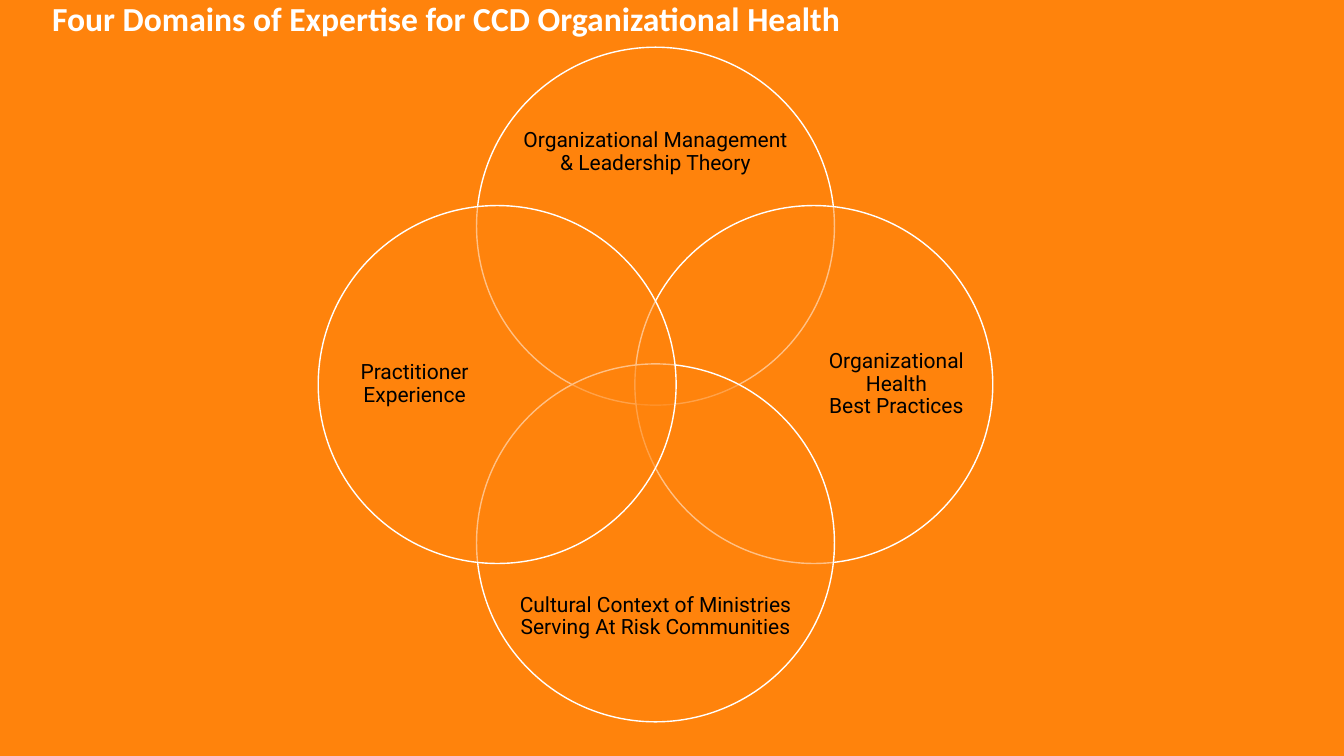
"""Build the slide with four overlapping domains of expertise."""
from dataclasses import dataclass

from lxml import etree
from pptx import Presentation
from pptx.dml.color import RGBColor
from pptx.enum.shapes import MSO_SHAPE
from pptx.enum.text import MSO_ANCHOR, MSO_AUTO_SIZE, PP_ALIGN
from pptx.oxml.ns import qn
from pptx.util import Cm, Pt

OVAL = MSO_SHAPE.OVAL
MIDDLE = MSO_ANCHOR.MIDDLE
NO_FIT = MSO_AUTO_SIZE.NONE
LEFT, CENTER = PP_ALIGN.LEFT, PP_ALIGN.CENTER
TITLE_ONLY = 5

CENTER_X, CENTER_Y = 16.52, 9.69
DIAMETER = 9.02
CIRCLE_SHIFT = 3.99
WIDE_LABEL = (6.93, 2.87, 5.85)
TALL_LABEL = (3.48, 6.93, 6.07)
DOMAINS = [
    (0, -1, WIDE_LABEL, ["Organizational Management & Leadership Theory"]),
    (1, 0, TALL_LABEL, ["Organizational Health", "Best Practices"]),
    (0, 1, WIDE_LABEL, ["Cultural Context of Ministries Serving At Risk Communities"]),
    (-1, 0, TALL_LABEL, ["Practitioner Experience"]),
]


@dataclass(frozen=True)
class Theme:
    orange: RGBColor = RGBColor(0xFF, 0x83, 0x0C)
    white: RGBColor = RGBColor(0xFF, 0xFF, 0xFF)
    black: RGBColor = RGBColor(0, 0, 0)
    title_font: str = "Calibri"
    label_font: str = "Roboto"
    title_size: int = 24
    label_size: int = 15
    line_spacing: float = 0.9
    circle_opacity: int = 50


class Page:
    def __init__(self, deck, theme):
        self.theme = theme
        self.slide = deck.slides.add_slide(deck.slide_layouts[TITLE_ONLY])
        fill = self.slide.background.fill
        fill.solid()
        fill.fore_color.rgb = theme.orange

    def add_lines(self, para, lines, font, size, color, align, bold=False):
        para.alignment = align
        para.line_spacing = self.theme.line_spacing
        for index, line in enumerate(lines):
            if index:
                para.add_line_break()
            span = para.add_run()
            span.text = line
            span.font.name = font
            span.font.size = Pt(size)
            span.font.bold = bold
            span.font.color.rgb = color

    def title(self, text):
        box = self.slide.shapes.title
        box.left, box.top, box.width, box.height = Cm(1.06), Cm(0), Cm(30.02), Cm(1.02)
        frame = box.text_frame
        frame.auto_size = NO_FIT
        frame.vertical_anchor = MIDDLE
        self.add_lines(frame.paragraphs[0], [text], self.theme.title_font,
                       self.theme.title_size, self.theme.white, LEFT, bold=True)

    def circle(self, x, y, diameter):
        circle = self.slide.shapes.add_shape(
            OVAL, Cm(x - diameter / 2), Cm(y - diameter / 2), Cm(diameter), Cm(diameter))
        circle.shadow.inherit = False
        circle.fill.solid()
        circle.fill.fore_color.rgb = self.theme.orange
        color = circle.element.spPr.find(qn("a:solidFill"))[0]
        alpha = etree.SubElement(color, qn("a:alpha"))
        alpha.set("val", str(self.theme.circle_opacity * 1000))
        circle.line.color.rgb = self.theme.white
        circle.line.width = Pt(1)

    def label(self, x, y, width, height, lines):
        box = self.slide.shapes.add_textbox(
            Cm(x - width / 2), Cm(y - height / 2), Cm(width), Cm(height))
        frame = box.text_frame
        frame.word_wrap = True
        frame.vertical_anchor = MIDDLE
        frame.margin_left = frame.margin_right = Cm(0)
        frame.margin_top = frame.margin_bottom = Cm(0)
        self.add_lines(frame.paragraphs[0], lines, self.theme.label_font,
                       self.theme.label_size, self.theme.black, CENTER)


def main():
    deck = Presentation()
    deck.slide_width, deck.slide_height = Cm(33.87), Cm(19.05)
    page = Page(deck, Theme())
    page.title("Four Domains of Expertise for CCD Organizational Health")
    for across, down, (width, height, label_shift), lines in DOMAINS:
        page.circle(CENTER_X + across * CIRCLE_SHIFT, CENTER_Y + down * CIRCLE_SHIFT, DIAMETER)
        page.label(CENTER_X + across * label_shift, CENTER_Y + down * label_shift,
                   width, height, lines)
    deck.save("out.pptx")


if __name__ == "__main__":
    main()
